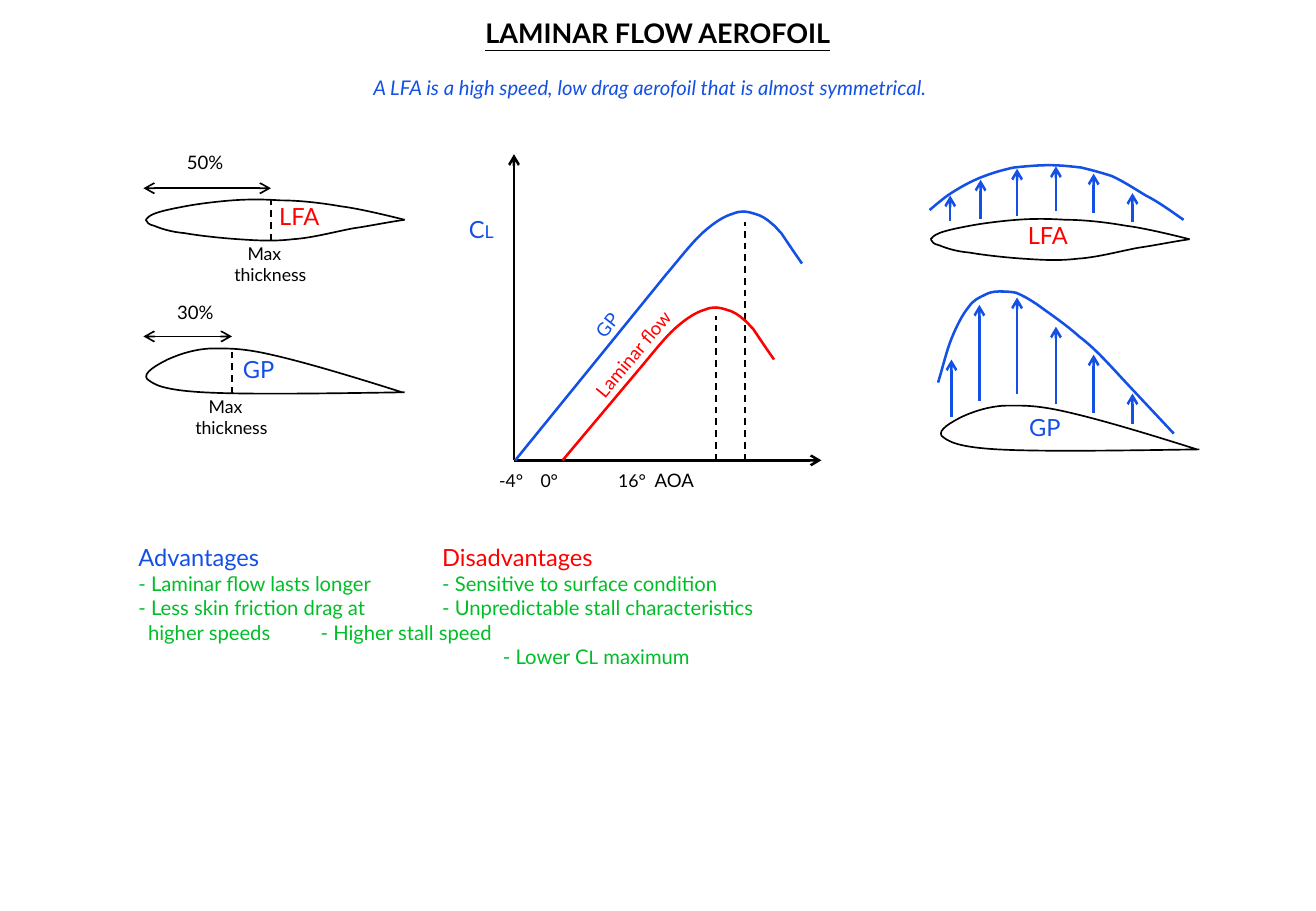
from lxml.etree import SubElement
from pptx import Presentation
from pptx.dml.color import RGBColor
from pptx.enum.dml import MSO_LINE
from pptx.enum.shapes import MSO_CONNECTOR
from pptx.enum.text import MSO_AUTO_SIZE, PP_ALIGN
from pptx.oxml.ns import qn
from pptx.util import Inches, Pt

BLACK, BLUE, RED, GREEN = "000000", "1450E6", "FF0000", "00BE28"

# Each curve is a start point followed by groups of two handles and an end point
LFA_LOWER = [(0, .17), (.01, .19), (.02, .21), (.07, .22), (.12, .24), (.2, .27), (.32, .28),
             (.43, .3), (.61, .32), (.76, .33), (.91, .34), (1.05, .35), (1.21, .33),
             (1.37, .32), (1.55, .27), (1.71, .24), (1.85, .22), (1.99, .19), (2.13, .17)]
LFA_UPPER = [(0, .17), (.01, .16), (.02, .14), (.07, .12), (.12, .1), (.21, .08), (.32, .06),
             (.42, .04), (.58, .02), (.71, .01), (.84, 0), (.96, 0), (1.11, .01),
             (1.26, .01), (1.44, .03), (1.61, .06), (1.78, .08), (2.13, .17), (2.13, .17)]
GP_OUTLINE = [(2.13, .36), (1.47, .37), (.82, .38), (.47, .36), (.12, .34), (.06, .29), (.01, .25),
              (-.03, .2), (.1, .13), (.18, .09), (.27, .05), (.38, .01), (.52, 0),
              (.66, 0), (.77, -.01), (1.03, .05), (1.3, .11), (1.7, .23), (2.11, .36)]
LFA_PRESSURE = [(0, .37), (.07, .31), (.14, .25), (.21, .21), (.29, .16), (.37, .12), (.45, .09),
                (.53, .06), (.6, .04), (.69, .02), (.78, .01), (.89, 0), (.98, 0),
                (1.08, 0), (1.16, .01), (1.25, .02), (1.33, .04), (1.41, .06), (1.5, .09),
                (1.59, .13), (1.68, .19), (1.78, .25), (1.88, .3), (1.99, .38), (2.09, .45)]
GP_PRESSURE = [(0, .75), (.04, .62), (.07, .49), (.11, .39), (.15, .29), (.2, .19), (.25, .13),
               (.29, .07), (.34, .05), (.38, .03), (.42, .01), (.45, 0), (.5, 0),
               (.54, 0), (.59, 0), (.64, .01), (.69, .03), (.73, .05), (.82, .11),
               (.9, .17), (1.05, .27), (1.16, .37), (1.28, .46), (1.38, .57), (1.5, .7),
               (1.63, .84), (1.79, 1.01), (1.94, 1.17)]
STALL = [(0, .51), (.11, .38), (.21, .25), (.3, .17), (.39, .09), (.47, .04), (.54, .02),
         (.61, -.01), (.66, 0), (.72, .02), (.77, .03), (.83, .07), (.86, .1),
         (.9, .13), (.89, .13), (.94, .18), (.98, .24), (1.04, .33), (1.11, .43)]
# Aerofoil: surfaces, name, width of the name box, colour
LFA = ([LFA_LOWER, LFA_UPPER], "LFA", .74, RED)
GP = ([GP_OUTLINE], "GP", 1.34, BLUE)


def colour(code):
    return RGBColor.from_string(code)


def add_text(slide, left, top, width, height, lines):
    """Add a text box; each line is a list of (text, size, colour)."""
    box = slide.shapes.add_textbox(Inches(left), Inches(top), Inches(width), Inches(height))
    frame = box.text_frame
    frame.word_wrap = True
    frame.auto_size = MSO_AUTO_SIZE.SHAPE_TO_FIT_TEXT
    for number, pieces in enumerate(lines):
        para = frame.add_paragraph() if number else frame.paragraphs[0]
        for words, size, code in pieces:
            span = para.add_run()
            span.text = words
            span.font.name = "Lato"
            span.font.size = Pt(size)
            span.font.color.rgb = colour(code)
    return box


def add_label(slide, left, top, width, words, size, code, rows=1):
    height = round(.1 + rows * size / 60, 2)
    return add_text(slide, left, top, width, height, [[(words, size, code)]])


def set_indent(para, margin, first):
    properties = para._p.get_or_add_pPr()
    properties.set("marL", str(Inches(margin)))
    properties.set("indent", str(Inches(first)))


def set_tabs(para, positions):
    stops = SubElement(para._p.get_or_add_pPr(), qn("a:tabLst"))
    for position in positions:
        stop = SubElement(stops, qn("a:tab"))
        stop.set("pos", str(Inches(position)))
        stop.set("algn", "l")


def add_line(slide, start, end, code, weight, ends=(), dashed=False):
    line = slide.shapes.add_connector(MSO_CONNECTOR.STRAIGHT, *map(Inches, start + end))
    line.line.color.rgb = colour(code)
    line.line.width = Pt(weight)
    if dashed:
        line.line.dash_style = MSO_LINE.DASH
    for name in ends:
        SubElement(line.line._get_or_add_ln(), qn("a:" + name)).set("type", "arrow")
    SubElement(line._element.spPr, qn("a:effectLst"))


def add_curve(slide, left, top, points, code, weight):
    """Draw a chain of cubic Bezier segments from the box corner."""
    dots = [(Inches(left + x), Inches(top + y)) for x, y in points]
    builder = slide.shapes.build_freeform(*dots[0])
    builder.add_line_segments(dots[3::3], close=False)
    curve = builder.convert_to_shape()
    curve.shadow.inherit = False
    curve.fill.background()
    curve.line.color.rgb = colour(code)
    curve.line.width = Pt(weight)
    # Turn each straight segment into a Bezier segment
    for number, straight in enumerate(list(curve._element.iter(qn("a:lnTo")))):
        outline = straight.getparent()
        bend = SubElement(outline, qn("a:cubicBezTo"))
        outline.remove(straight)
        for x, y in dots[3 * number + 1:3 * number + 4]:
            point = SubElement(bend, qn("a:pt"))
            point.set("x", str(x - curve.left))
            point.set("y", str(y - curve.top))


def add_headings(slide, width):
    title = add_label(slide, 0, .09, width, "LAMINAR FLOW AEROFOIL", 16, BLACK)
    summary = add_label(slide, 1.78, .57, 7.14,
                        "A LFA is a high speed, low drag aerofoil that is almost symmetrical.", 12, BLUE)
    for box in (title, summary):
        box.text_frame.paragraphs[0].alignment = PP_ALIGN.CENTER
    title_font = title.text_frame.paragraphs[0].runs[0].font
    title_font.bold = title_font.underline = True
    summary.text_frame.paragraphs[0].runs[0].font.italic = True


def add_thickness(slide, left, top, foil, percent, percent_at, rise, thickest, bottom, name_at):
    """Aerofoil with its chord dimension and point of maximum thickness."""
    surfaces, name, name_width, code = foil
    for surface in surfaces:
        add_curve(slide, left, top, surface, BLACK, 1)
    middle = left + thickest
    add_line(slide, (left - .02, top - rise), (middle, top - rise), BLACK, 1, ("headEnd", "tailEnd"))
    add_line(slide, (middle, top + bottom), (middle, top), BLACK, 1, dashed=True)
    add_label(slide, left + percent_at[0], top + percent_at[1], .83, percent, 11, BLACK)
    add_label(slide, left + name_at[0], top + name_at[1], name_width, name, 14, code)
    note = add_label(slide, middle - .4, top + bottom - .03, 1.1, "Max thickness", 10.5, BLACK, 2)
    set_indent(note.text_frame.paragraphs[0], 0, .11)


def add_lift_graph(slide, left, top, width, height):
    """Lift coefficient against angle of attack for both aerofoils."""
    base = top + height
    for end in ((left, top), (left + width, base)):
        add_line(slide, (left, base), end, BLACK, 1.5, ("tailEnd",))
    # Rising line foot, start of the stall curve, stall angle and its height
    for foot, x, y, angle, peak, code in ((.01, 1.26, .47, 1.9, .56, BLUE),
                                          (.4, 1.03, 1.26, 1.66, 1.33, RED)):
        add_line(slide, (left + angle, base), (left + angle, top + peak), BLACK, 1, dashed=True)
        add_line(slide, (left + foot, base), (left + x, top + y + .51), code, 1.5)
        add_curve(slide, left + x, top + y, STALL, code, 1.5)
    add_label(slide, left + .49, top + 1.11, .79, "GP", 11, BLUE).rotation = 308.5
    add_label(slide, left + .37, top + 1.34, 1.49, "Laminar flow", 11, RED).rotation = 309.8
    add_text(slide, left - .47, top + .45, .74, .34, [[("C", 14, BLUE), ("L", 10.5, BLUE)]])
    # Axis labels on tab stops
    scale = add_text(slide, left - .22, base + .02, 3.86, .29,
                     [[("-4°\t0°\t16°\t", 10.5, BLACK), ("AOA", 11, BLACK)]])
    set_tabs(scale.text_frame.paragraphs[0], (.34, .98, 1.28))


def add_pressure(slide, left, top, foil, foil_at, name_at, envelope, arrows):
    """Pressure envelope above an aerofoil; arrows are (x, bottom, top)."""
    surfaces, name, name_width, code = foil
    for surface in surfaces:
        add_curve(slide, left + foil_at[0], top + foil_at[1], surface, BLACK, 1)
    add_curve(slide, left, top, envelope, BLUE, 1.5)
    for x, bottom, tip in arrows:
        add_line(slide, (left + x, top + bottom), (left + x, top + tip), BLUE, 1.5, ("tailEnd",))
    add_label(slide, left + name_at[0], top + name_at[1], name_width, name, 14, code)


def add_comparison(slide, left, top, width, height):
    """Advantages and disadvantages side by side on tab stops."""
    box = add_text(slide, left, top, width, height, [
        [("Advantages\t", 14, BLUE), ("Disadvantages", 14, RED)],
        [("- Laminar flow lasts longer\t- Sensitive to surface condition", 12, GREEN)],
        [("- Less skin friction drag at\t- Unpredictable stall characteristics", 12, GREEN)],
        [("higher speeds\t- Higher stall speed", 12, GREEN)],
        [("\t- Lower C", 12, GREEN), ("L", 11, GREEN), (" maximum", 12, GREEN)]])
    paras = box.text_frame.paragraphs
    set_indent(paras[3], 0, .08)
    for para, position in zip(paras, (2.5, 2.5, 2.5, 3, 3)):
        set_tabs(para, [position])


def main():
    deck = Presentation()
    deck.slide_width, deck.slide_height = Inches(10.83), Inches(7.5)
    slide = deck.slides.add_slide(deck.slide_layouts[6])
    add_headings(slide, 10.83)
    add_thickness(slide, 1.2, 1.64, LFA, "50%", (.24, -.45), .09, 1.03, .34, (1, -.03))
    add_thickness(slide, 1.2, 2.87, GP, "30%", (.16, -.44), .1, .71, .37, (.7, 0))
    add_lift_graph(slide, 4.23, 1.27, 2.53, 2.52)
    add_pressure(slide, 7.65, 1.36, LFA, (.01, .44), (.71, .41), LFA_PRESSURE,
                 [(.17, .46, .25), (.42, .44, .12), (.72, .42, .03),
                  (1.04, .38, .01), (1.35, .39, .07), (1.67, .47, .23)])
    add_pressure(slide, 7.72, 2.4, GP, (.02, .94), (.65, .95), GP_PRESSURE,
                 [(.11, 1.03, .56), (.34, .9, .11), (.65, .84, .05),
                  (.97, .93, .29), (1.28, 1, .52), (1.6, 1.09, .84)])
    add_comparison(slide, 1.04, 4.42, 7.01, 1.18)
    deck.save("out.pptx")


if __name__ == "__main__":
    main()
